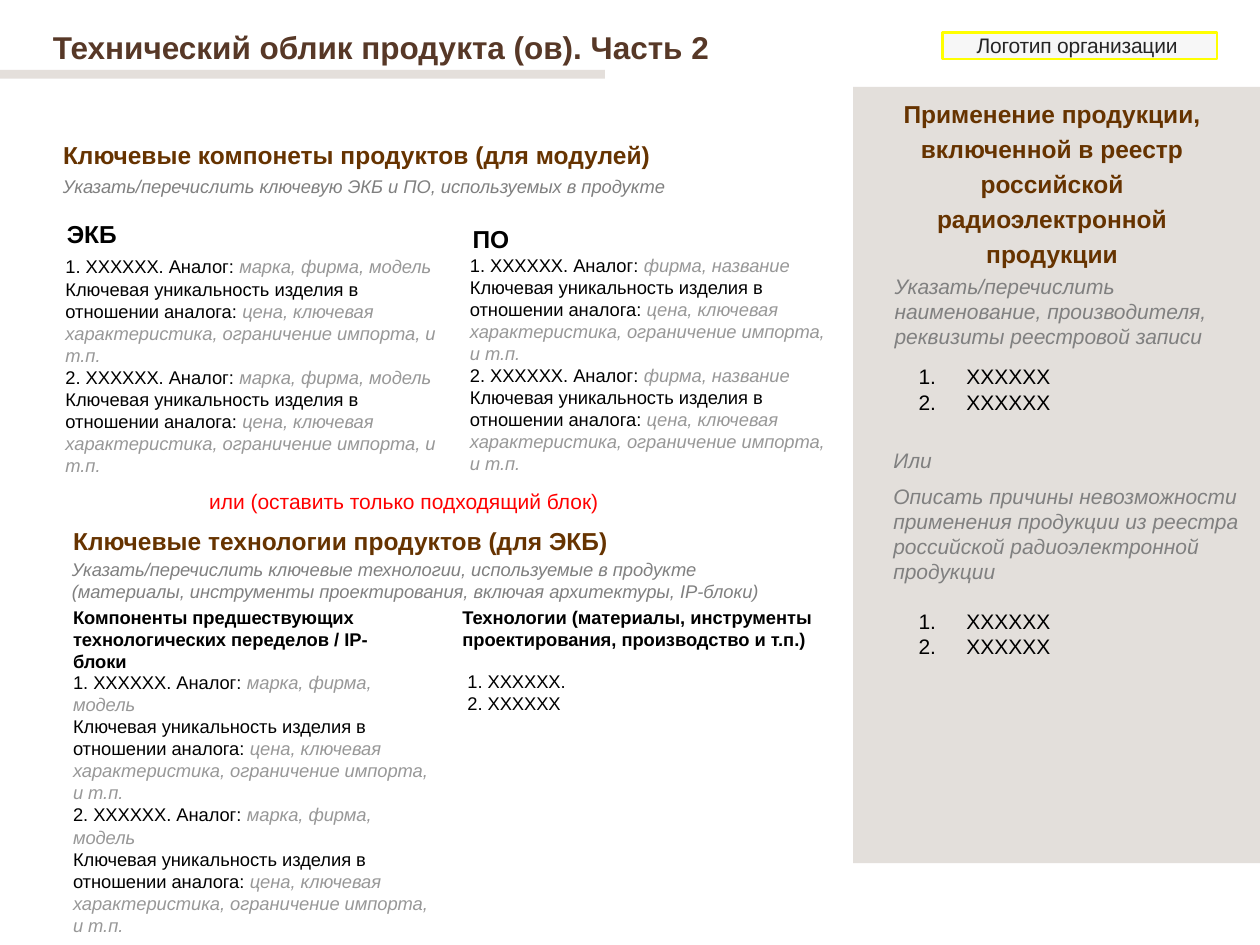
from pptx import Presentation
from pptx.dml.color import RGBColor
from pptx.enum.shapes import MSO_CONNECTOR, MSO_SHAPE
from pptx.enum.text import MSO_ANCHOR, MSO_AUTO_SIZE, PP_ALIGN
from pptx.oxml.ns import qn
from pptx.util import Inches, Pt
from lxml.etree import SubElement

# Theme
THEME = {
    "font": "Arial",
    "title": "573827", "heading": "663300", "text": "000000", "hint": "808080",
    "sample": "989898", "alert": "FF0000", "panel": "E3DFDB", "rule": "A8998C",
    "logo_fill": "F1F1F1", "logo_line": "FFFF00", "logo_text": "252525",
    "sz_title": 18, "sz_heading": 14, "sz_note": 12, "sz_body": 10.5,
}

# Content
TITLE = "Технический облик продукта (ов). Часть 2"
LOGO = "Логотип организации"
OR_LINE = "или (оставить только подходящий блок)"
HEADINGS = [  # text, left, top, width
    ("Ключевые компонеты продуктов (для модулей)", 0.5, 1.07, 5.38),
    ("ЭКБ", 0.53, 1.69, 2.29),
    ("ПО", 3.75, 1.73, 2.29),
    ("Ключевые технологии продуктов (для ЭКБ)", 0.58, 4.13, 5.38),
]
BLACK_HEADINGS = ("ЭКБ", "ПО")
HINTS = [  # text, left, top, width, height
    ("Указать/перечислить ключевую ЭКБ и ПО, используемых в продукте", 0.5, 1.39, 5.84, 0.18),
    ("Указать/перечислить ключевые технологии, используемые в продукте "
     "(материалы, инструменты проектирования, включая архитектуры, IP-блоки)",
     0.57, 4.43, 5.84, 0.35),
]
COLUMN_TITLES = [
    ("Компоненты предшествующих технологических переделов / IP-блоки", 0.58, 4.81, 2.44, 0.53),
    ("Технологии (материалы, инструменты проектирования, производство и т.п.)",
     3.67, 4.81, 3.06, 0.35),
]
UNIQUENESS = "Ключевая уникальность изделия в отношении аналога: "
UNIQUENESS_SAMPLE = "цена, ключевая характеристика, ограничение импорта, и т.п."
ANALOGS = [  # sample, left, top, width, height
    ("марка, фирма, модель", 0.47, 1.98, 3.13, 2.04),
    ("фирма, название", 3.68, 1.97, 2.97, 2.04),
    ("марка, фирма, модель", 0.53, 5.28, 2.96, 2.22),
]
TECHNOLOGIES = ["1. XXXXXX.", "2. XXXXXX"]
PANEL_TITLE = "Применение продукции, включенной в реестр российской радиоэлектронной продукции"
PANEL_HINTS = [  # paragraphs, left, top, height
    (["Указать/перечислить наименование, производителя, реквизиты реестровой записи"],
     7.1, 2.17, 0.61),
    (["Или", "Описать причины невозможности применения продукции из реестра "
      "российской радиоэлектронной продукции"], 7.09, 3.55, 1.09),
]
PANEL_LIST = ["XXXXXX", "ХХХХХХ"]
PANEL_LIST_TOPS = [2.84, 4.78]


def rgb(name):
    return RGBColor.from_string(THEME[name])


def set_alpha(fill_color_parent, percent):
    color = next(fill_color_parent.iter(qn("a:srgbClr")))
    SubElement(color, qn("a:alpha")).set("val", str(percent * 1000))


def add_rect(s, box, fill):
    sp = s.shapes.add_shape(MSO_SHAPE.RECTANGLE, *map(Inches, box))
    sp.shadow.inherit = False
    sp.fill.solid()
    sp.fill.fore_color.rgb = rgb(fill)
    sp.line.fill.background()
    return sp


def put_text(sp, paras, size="sz_body", color="text", bold=False, italic=False,
             align=PP_ALIGN.LEFT, leading=None, gap=0, inset=0, wrap=True,
             numbered=False, indent=0, tracking=None):
    """Each paragraph is a string or a list of (text, is_sample) runs."""
    tf = sp.text_frame
    tf.word_wrap = wrap
    tf.auto_size = MSO_AUTO_SIZE.SHAPE_TO_FIT_TEXT
    tf.vertical_anchor = MSO_ANCHOR.TOP
    tf.margin_left = tf.margin_right = tf.margin_top = tf.margin_bottom = Inches(inset)
    for i, para in enumerate(paras):
        p = tf.add_paragraph() if i else tf.paragraphs[0]
        p.alignment = align
        if leading:
            p.line_spacing = Pt(leading)
        if i and gap:
            p.space_before = Pt(gap)
        pPr = p._p.get_or_add_pPr()
        if numbered:
            pPr.set("marL", str(Inches(0.38)))
            pPr.set("indent", str(-Inches(0.38)))
            SubElement(pPr, qn("a:buFont")).set("typeface", THEME["font"])
            SubElement(pPr, qn("a:buAutoNum")).set("type", "arabicPeriod")
        elif indent:
            pPr.set("indent", str(Inches(indent)))
        for text, sample in [(para, False)] if isinstance(para, str) else para:
            r = p.add_run()
            r.text = text
            r.font.name, r.font.size = THEME["font"], Pt(THEME[size])
            r.font.bold, r.font.italic = bold, italic or sample
            r.font.color.rgb = rgb("sample" if sample else color)
            if tracking:
                r._r.get_or_add_rPr().set("spc", str(round(tracking * 100)))


def add_text(s, box, paras, **fmt):
    put_text(s.shapes.add_textbox(*map(Inches, box)), paras, **fmt)


def analog_paragraphs(sample):
    paras = []
    for n in (1, 2):
        paras += [[(f"{n}. XXXXXX. Аналог: ", False), (sample, True)],
                  [(UNIQUENESS, False), (UNIQUENESS_SAMPLE, True)]]
    return paras


def main():
    prs = Presentation()
    prs.slide_width, prs.slide_height = Inches(10), Inches(7.5)
    s = prs.slides.add_slide(prs.slide_layouts[6])

    # Header: logo placeholder, title, rule
    logo = add_rect(s, (7.48, 0.26, 2.18, 0.21), "logo_fill")
    set_alpha(logo._element.spPr, 52)
    logo.line.color.rgb, logo.line.width = rgb("logo_line"), Pt(1.56)
    put_text(logo, [LOGO], size="sz_note", color="logo_text", indent=0.27, tracking=-0.1)
    add_text(s, (0.37, 0.17, 5.39, 0.4), [TITLE], size="sz_title", color="title",
             bold=True, inset=0.05, wrap=False)
    rule = s.shapes.add_connector(MSO_CONNECTOR.STRAIGHT, Inches(-0.01), Inches(0.59),
                                  Inches(4.8), Inches(0.59))
    rule.line.color.rgb, rule.line.width = rgb("rule"), Pt(5)
    set_alpha(rule._element.spPr, 31)
    SubElement(rule._element.spPr, qn("a:effectLst"))

    # Left part: headings, hints and columns
    for text, x, y, w in HEADINGS:
        add_text(s, (x, y, w, 0.26), [text], size="sz_heading", bold=True, leading=20,
                 color="text" if text in BLACK_HEADINGS else "heading")
    for text, *box in HINTS:
        add_text(s, box, [text], color="hint", italic=True)
    for text, *box in COLUMN_TITLES:
        add_text(s, box, [text], bold=True)
    for sample, *box in ANALOGS:
        add_text(s, box, analog_paragraphs(sample), inset=0.05)
    add_text(s, (3.66, 5.27, 2.96, 0.45), TECHNOLOGIES, inset=0.05)
    add_text(s, (1.61, 3.83, 3.7, 0.3), [OR_LINE], size="sz_note", color="alert", inset=0.05)

    # Right panel
    add_rect(s, (6.77, 0.69, 3.25, 6.16), "panel")
    add_text(s, (7.05, 0.69, 2.6, 1.48), [PANEL_TITLE], size="sz_heading", color="heading",
             bold=True, align=PP_ALIGN.CENTER, leading=20, inset=0.05)
    for paras, x, y, h in PANEL_HINTS:
        add_text(s, (x, y, 2.96, h), paras, size="sz_note", color="hint", italic=True, gap=6)
    for y in PANEL_LIST_TOPS:
        add_text(s, (7.24, y, 1.15, 0.5), PANEL_LIST, size="sz_note", inset=0.05,
                 wrap=False, numbered=True)

    prs.save("out.pptx")


if __name__ == "__main__":
    main()
